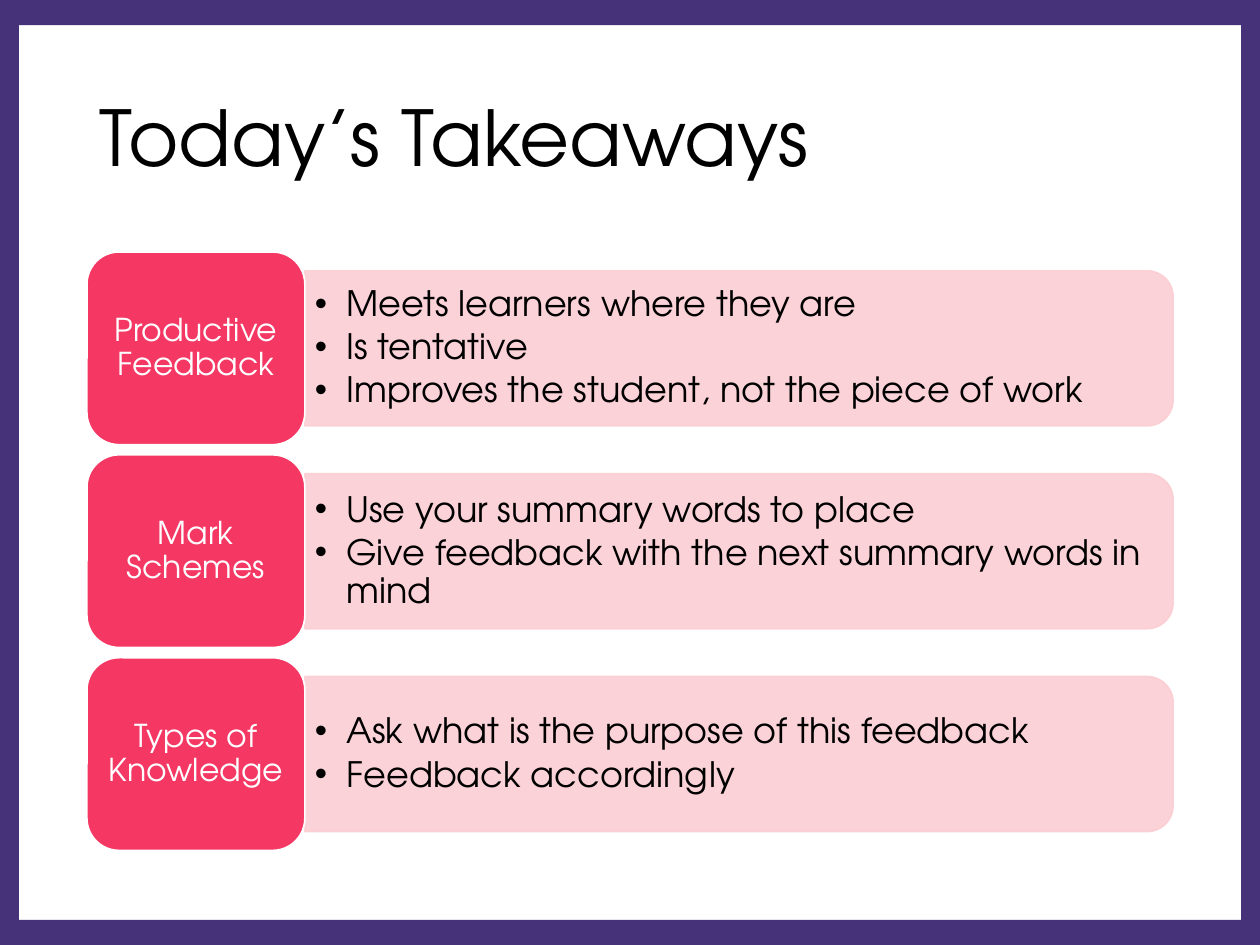
from lxml import etree
from pptx import Presentation
from pptx.dml.color import RGBColor
from pptx.enum import shapes, text
from pptx.oxml import ns
from pptx.util import Inches, Pt

FONT = "TeX Gyre Adventor"
PURPLE = RGBColor(0x46, 0x32, 0x78)
PINK = RGBColor(0xFB, 0xCE, 0xD3)
ROSE = RGBColor(0xF5, 0x37, 0x64)
BLACK = RGBColor(0, 0, 0)
WHITE = RGBColor(255, 255, 255)
SHAPE = shapes.MSO_SHAPE

ROWS = [
    ("Productive Feedback", ["Meets learners where they are", "Is tentative",
                             "Improves the student, not the piece of work"]),
    ("Mark Schemes", ["Use your summary words to place",
                      "Give feedback with the next summary words in mind"]),
    ("Types of Knowledge", ["Ask what is the purpose of this feedback",
                            "Feedback accordingly"]),
]


def add_box(slide, kind, left, top, width, height, fill, line=None):
    box = slide.shapes.add_shape(kind, Inches(left), Inches(top),
                                 Inches(width), Inches(height))
    box.shadow.inherit = False
    box.fill.solid()
    box.fill.fore_color.rgb = fill
    if line is None:
        box.line.fill.background()
    else:
        box.line.color.rgb = line
        box.line.width = Pt(1)
    return box


def set_frame(frame, side, edge):
    frame.word_wrap = True
    frame.vertical_anchor = text.MSO_ANCHOR.MIDDLE
    frame.margin_left = frame.margin_right = Inches(side)
    frame.margin_top = frame.margin_bottom = Inches(edge)


def style(para, size, color, align):
    para.alignment = align
    para.line_spacing = 0.9
    para.font.size = Pt(size)
    para.font.name = FONT
    para.font.color.rgb = color


def add_bullet(para):
    props = para._p.get_or_add_pPr()
    props.set("marL", str(Inches(0.25)))
    props.set("indent", str(-Inches(0.25)))
    etree.SubElement(props, ns.qn("a:buFont"), typeface="Arial")
    etree.SubElement(props, ns.qn("a:buChar"), char="•")


def fade(box, share):
    for color in list(box._element.spPr.iter(ns.qn("a:srgbClr"))):
        etree.SubElement(color, ns.qn("a:alpha"), val=str(share * 1000))


def add_frame(slide, width, height):
    side, edge = 0.15, 0.2
    for left in (0, width - side):
        add_box(slide, SHAPE.RECTANGLE, left, 0, side, height, PURPLE)
    for top in (0, height - edge):
        add_box(slide, SHAPE.RECTANGLE, 0.05, top, width - 0.1, edge, PURPLE)


def add_title(slide, left, top, width, height):
    title = slide.shapes.title
    title.left, title.top = Inches(left), Inches(top)
    title.width, title.height = Inches(width), Inches(height)
    title.text_frame.text = "Today’s Takeaways"
    set_frame(title.text_frame, 0.1, 0.05)
    style(title.text_frame.paragraphs[0], 44, BLACK, text.PP_ALIGN.LEFT)


def add_row(slide, left, top, width, height, label, points):
    tile_w, bar_h = 1.73, 1.23
    bar_w = width - tile_w
    bar_x = left + tile_w
    mid = top + height / 2

    # Bar, turned so that its round corners face right
    bar = add_box(slide, SHAPE.ROUND_2_SAME_RECTANGLE,
                  bar_x + (bar_w - bar_h) / 2, mid - bar_w / 2,
                  bar_h, bar_w, PINK, PINK)
    bar.rotation = 90
    fade(bar, 90)

    # Bullets, upright on the bar
    note = slide.shapes.add_textbox(Inches(bar_x), Inches(mid - 0.555),
                                    Inches(bar_w - 0.06), Inches(1.11))
    frame = note.text_frame
    set_frame(frame, 0.08, 0.04)
    for i, point in enumerate(points):
        para = frame.add_paragraph() if i else frame.paragraphs[0]
        para.text = point
        add_bullet(para)
        style(para, 20, BLACK, text.PP_ALIGN.LEFT)
        para.space_after = Pt(3)

    # Label tile
    tile = add_box(slide, SHAPE.ROUNDED_RECTANGLE, left, top, tile_w, height,
                   ROSE, WHITE)
    set_frame(tile.text_frame, 0.07, 0.04)
    tile.text_frame.text = label
    style(tile.text_frame.paragraphs[0], 18, WHITE, text.PP_ALIGN.CENTER)


def add_rows(slide, left, top, width, height):
    gap = 0.08
    row_h = (height - gap * (len(ROWS) - 1)) / len(ROWS)
    for i, (label, points) in enumerate(ROWS):
        add_row(slide, left, top + i * (row_h + gap), width, row_h,
                label, points)


def main():
    deck = Presentation()
    deck.slide_width, deck.slide_height = Inches(10), Inches(7.5)
    slide = deck.slides.add_slide(deck.slide_layouts[5])
    slide.background.fill.solid()
    slide.background.fill.fore_color.rgb = WHITE
    add_frame(slide, 10, 7.5)
    add_title(slide, 0.69, 0.4, 8.62, 1.45)
    add_rows(slide, 0.69, 2, 8.62, 4.75)
    deck.save("out.pptx")


if __name__ == "__main__":
    main()
